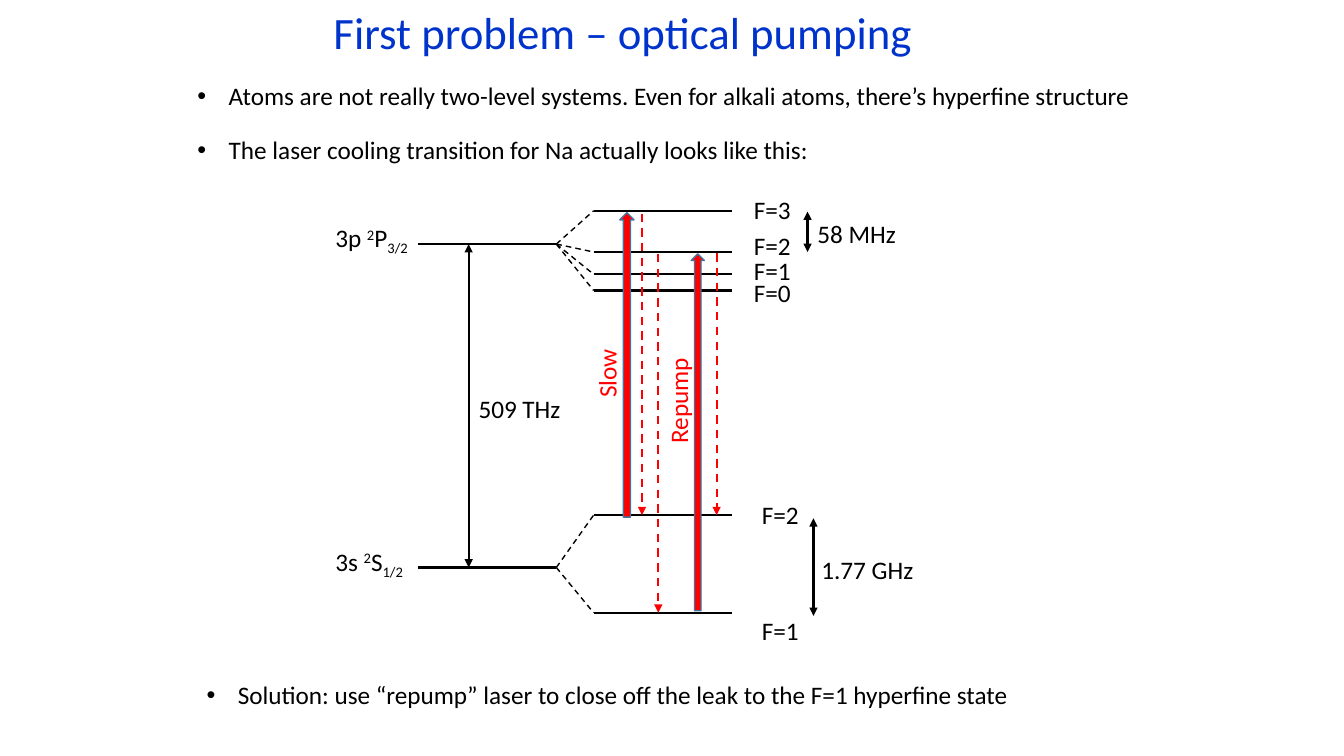
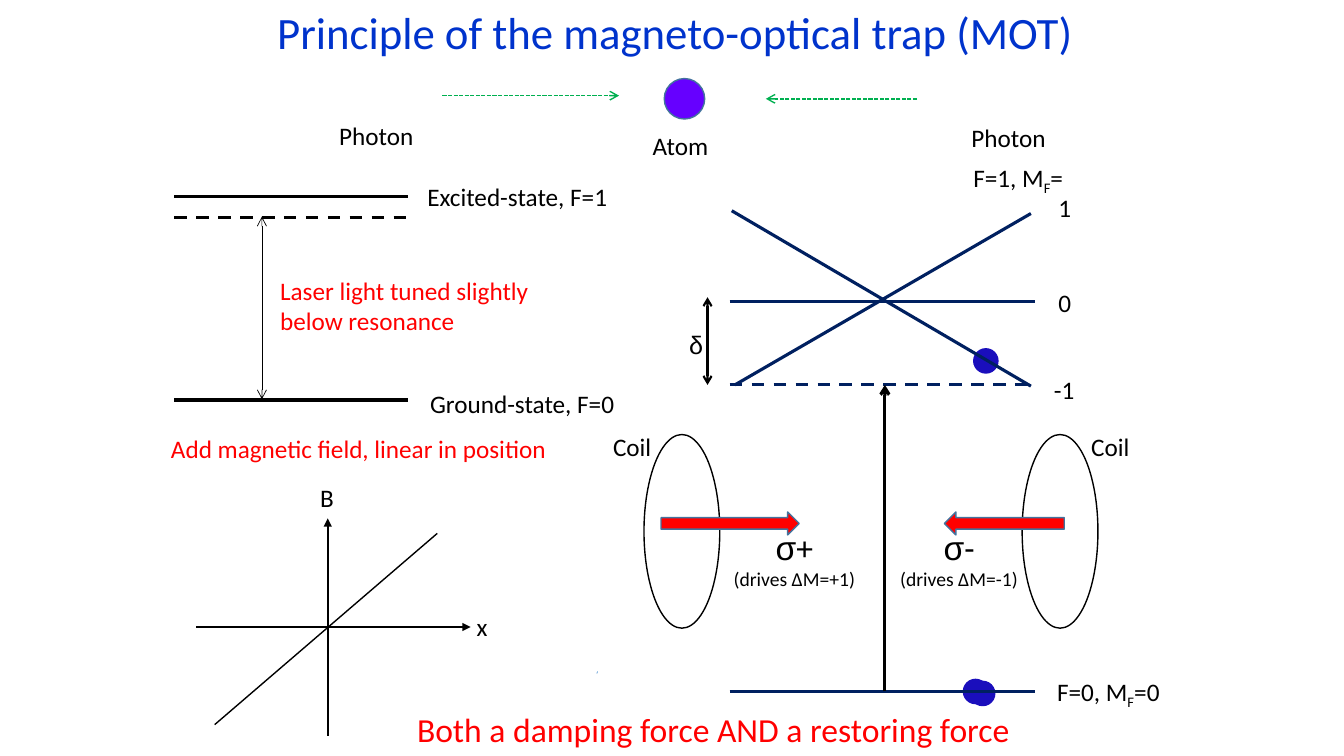
from dataclasses import dataclass
from lxml.etree import SubElement
from pptx import Presentation
from pptx.dml.color import RGBColor
from pptx.enum.dml import MSO_LINE
from pptx.enum.shapes import MSO_CONNECTOR, MSO_SHAPE
from pptx.enum.text import MSO_ANCHOR, MSO_AUTO_SIZE, PP_ALIGN
from pptx.oxml.ns import qn
from pptx.slide import Slide
from pptx.util import Cm, Pt

COLORS = {
    "title": "0033CC",
    "text": "000000",
    "accent": "FF0000",
    "outline": "43739E",
    "zeeman": "002060",
    "trapped": "1A0EBC",
    "atom": "6600FF",
    "photon": "00B050",
    "tick": "5B9BD5",
}
FONT = "Calibri"
SUPER, SUB = 30000, -25000
LINE_HEIGHT = 1.02


def color(name):
    return RGBColor.from_string(COLORS[name])


def set_font(font, size, name="text", family=FONT):
    font.size, font.name = Pt(size), family
    font.color.rgb = color(name)


def add_spans(para, spans):
    """Add plain strings, or (text, baseline) pairs, to a paragraph."""
    for item in spans:
        text, baseline = (item, 0) if isinstance(item, str) else item
        span = para.add_run()
        span.text = text
        if baseline:
            span.font._element.set("baseline", str(baseline))


@dataclass
class Region:
    """Part of a page; all lengths are in cm from its top left corner."""
    page: Slide
    left: float
    top: float

    def place(self, x, y):
        return Cm(self.left + x), Cm(self.top + y)

    def line(self, start, end, name="text", width=1.5, dash=None, head=None, tail=None):
        connector = self.page.shapes.add_connector(
            MSO_CONNECTOR.STRAIGHT, *self.place(*start), *self.place(*end))
        connector.line.color.rgb = color(name)
        connector.line.width = Pt(width)
        if dash:
            connector.line.dash_style = dash
        outline = connector.line._get_or_add_ln()
        for tag, kind in (("a:headEnd", head), ("a:tailEnd", tail)):
            if kind:
                SubElement(outline, qn(tag)).set("type", kind)
        SubElement(connector._element.spPr, qn("a:effectLst"))

    def shape(self, kind, x, y, width, height, fill=None, outline="outline"):
        shape = self.page.shapes.add_shape(kind, *self.place(x, y), Cm(width), Cm(height))
        shape.shadow.inherit = False
        if fill:
            shape.fill.solid()
            shape.fill.fore_color.rgb = color(fill)
        else:
            shape.fill.background()
        shape.line.color.rgb = color(outline)
        shape.line.width = Pt(1)

    def text_box(self, x, y, width, height=LINE_HEIGHT):
        box = self.page.shapes.add_textbox(*self.place(x, y), Cm(width), Cm(height))
        box.text_frame.word_wrap = True
        return box

    def label(self, x, y, *spans, width=5.5, name="text", size=18, family=FONT):
        box = self.text_box(x, y, width)
        para = box.text_frame.paragraphs[0]
        add_spans(para, spans)
        set_font(para.font, size, name, family)
        return box


def fit_placeholder(box, left, top, width, height):
    box.left, box.top, box.width, box.height = map(Cm, (left, top, width, height))
    frame = box.text_frame
    frame.auto_size = MSO_AUTO_SIZE.NONE
    frame.vertical_anchor = MSO_ANCHOR.TOP
    return frame


def add_title(page, text, left):
    frame = fit_placeholder(page.shapes.title, left, 0, 22, 1.63)
    para = frame.paragraphs[0]
    para.text = text
    para.alignment = PP_ALIGN.LEFT
    set_font(para.font, 32, "title")


def fill_bullets(box, lines, left, top, height):
    frame = fit_placeholder(box, left, top, 25, height)
    for index, text in enumerate(lines):
        para = frame.add_paragraph() if index else frame.paragraphs[0]
        para.text = text
        para.space_before, para.space_after = Pt(0), Pt(17)
        set_font(para.font, 18)
        indent = Cm(0.79)
        properties = para._p.get_or_add_pPr()
        properties.set("marL", str(indent))
        properties.set("indent", str(-indent))


def draw_hyperfine_levels(page, left, top):
    region = Region(page, left, top)
    coarse_left, coarse_right, fine_left, fine_right = 2.34, 5.82, 6.76, 10.24
    excited, ground = 1.45, 9.6
    upper, lower = (0.61, 1.65, 2.21, 2.62), (8.28, 10.74)

    for term, shell, subscript, level, split in (
            ("3p ", "P", "3/2", excited, upper), ("3s ", "S", "1/2", ground, lower)):
        region.line((coarse_left, level), (coarse_right, level))
        region.label(0, level - 0.67, term, ("2", SUPER), shell, (subscript, SUB), width=2.6)
        for fine in split:
            region.line((fine_left, fine), (fine_right, fine))
            region.line((coarse_right, level), (fine_left, fine), width=1, dash=MSO_LINE.DASH)

    for x, y, text in ((10.55, 0.08, "F=3"), (10.55, 0.99, "F=2"), (10.55, 1.62, "F=1"),
                       (10.55, 2.16, "F=0"), (10.75, 7.77, "F=2"), (10.75, 10.67, "F=1")):
        region.label(x, y, text, width=2.1)

    for x, start, end, text, text_x, text_y in (
            (3.61, excited, ground, "509 THz", 3.61, 5.08),
            (12.3, 8.36, 10.82, "1.77 GHz", 12.25, 9.14),
            (12.15, 0.63, 1.65, "58 MHz", 12.15, 0.68)):
        region.line((x, start), (x, end), head="triangle", tail="triangle")
        region.label(text_x, text_y, text, width=3.1)

    for x, start, width, height, text, text_x, text_y, text_width in (
            (7.42, 0.66, 0.36, 7.67, "Slow", 5.92, 3.89, 2.34),
            (9.22, 1.7, 0.33, 8.99, "Repump", 7.52, 4.85, 2.74)):
        region.shape(MSO_SHAPE.UP_ARROW, x, start, width, height, "accent")
        region.label(text_x, text_y, text, width=text_width, name="accent").rotation = 270

    for x, start, end in ((7.98, 0.68, lower[0]), (8.39, 1.7, lower[1]), (9.86, 1.68, lower[0])):
        region.line((x, start), (x, end), "accent", dash=MSO_LINE.DASH, tail="triangle")


def draw_atom_and_photons(page, left, top):
    region = Region(page, left, top)
    for start, end, y in ((2.85, 7.3, 0.43), (14.81, 11, 0.51)):
        region.line((start, y), (end, y), "photon", 1, MSO_LINE.SQUARE_DOT, tail="arrow")
    region.shape(MSO_SHAPE.OVAL, 8.44, 0, 1.02, 1.02, "atom")
    for x, y, text in ((0, 0.92, "Photon"), (7.9, 1.17, "Atom"), (15.93, 0.99, "Photon")):
        region.label(x, y, text, width=2.8)


def draw_detuned_laser(page, left, top):
    region = Region(page, left, top)
    for y, dash in ((0.55, None), (1.09, MSO_LINE.DASH), (5.68, None)):
        region.line((0, y), (5.89, y), width=2.25, dash=dash)
    region.line((2.21, 5.66), (2.21, 1.06), width=0.5, head="arrow", tail="arrow")
    region.label(6.13, 0.04, "Excited-state, F=1")
    region.label(6.2, 5.25, "Ground-state, F=0")
    region.label(2.42, 2.41, "Laser light tuned slightly below resonance",
                 width=7.09, name="accent")


def draw_field_plot(page, left, top):
    region = Region(page, left, top)
    region.label(0, 0, "Add magnetic field, linear in position", width=11, name="accent")
    region.line((4.2, 7.74), (4.2, 2.26), tail="triangle")
    region.line((0.89, 5), (7.8, 5), tail="triangle")
    region.line((1.35, 7.46), (6.96, 2.64), width=1)
    region.label(3.76, 1.24, "B", width=1.2)
    region.label(7.7, 4.47, "x", width=1.2)


def draw_zeeman_levels(page, left, top):
    region = Region(page, left, top)
    for x, y in ((7.18, 13.16), (7.44, 4.83), (7.36, 13.21)):
        region.shape(MSO_SHAPE.OVAL, x, y, 0.61, 0.61, "trapped", "trapped")

    ground, middle, laser = 13.46, 3.63, 5.74
    for start, end, dash in (
            ((1.29, ground), (8.99, ground), None),
            ((1.29, middle), (8.99, middle), None),
            ((1.34, 1.35), (8.88, 5.77), None),
            ((1.42, laser), (8.88, 1.42), None),
            ((1.29, laser), (8.99, laser), MSO_LINE.DASH)):
        region.line(start, end, "zeeman", 2.25, dash)
    region.line((5.2, ground), (5.2, laser), width=2.25, tail="arrow")
    region.line((0.73, 3.53), (0.73, laser), head="arrow", tail="arrow")

    region.label(0.02, 4.22, "δ", width=1.2, family="Arial")
    for x, y, text in ((9.32, 0.76, "1"), (9.32, 3.15, "0"), (9.21, 5.34, "-1")):
        region.label(x, y, text, width=1.5)
    for x, y, state, value in ((7.18, 0, "F=1, M", "="), (9.29, 12.96, "F=0, M", "=0")):
        region.label(x, y, state, ("F", SUB), value, width=4)


def draw_coils_and_beams(page, left, top):
    region = Region(page, left, top)
    for coil_x, text_x in ((1.03, 0), (10.56, 12.05)):
        region.shape(MSO_SHAPE.OVAL, coil_x, 0.2, 1.91, 4.88, outline="text")
        region.label(text_x, 0, "Coil", width=1.8)
    for kind, x, width, sign, rule, center in (
            (MSO_SHAPE.RIGHT_ARROW, 1.46, 3.48, "+", "(drives ΔM=+1)", 4.82),
            (MSO_SHAPE.LEFT_ARROW, 8.6, 3.02, "-", "(drives ΔM=-1)", 8.97)):
        region.shape(kind, x, 2.15, width, 0.58, "accent")
        frame = region.text_box(center - 2.1, 2.4, 4.2, 1.88).text_frame
        polarization, drive = frame.paragraphs[0], frame.add_paragraph()
        add_spans(polarization, ("σ", sign))
        add_spans(drive, (rule,))
        for para, size in ((polarization, 24), (drive, 14)):
            para.alignment = PP_ALIGN.CENTER
            set_font(para.font, size)
        polarization.runs[0].font.name = "Arial"


def build_pumping_page(deck):
    page = deck.slides.add_slide(deck.slide_layouts.get_by_name("Two Content"))
    add_title(page, "First problem – optical pumping", 8.15)
    problem, solution = list(page.placeholders)[1:]
    fill_bullets(problem, (
        "Atoms are not really two-level systems. Even for alkali atoms, "
        "there’s hyperfine structure",
        "The laser cooling transition for Na actually looks like this:"), 4.72, 1.9, 2.4)
    fill_bullets(solution, (
        "Solution: use “repump” laser to close off the leak to the F=1 hyperfine state",),
        4.95, 17, LINE_HEIGHT)
    draw_hyperfine_levels(page, 8.2, 4.7)


def build_trap_page(deck):
    page = deck.slides.add_slide(deck.slide_layouts.get_by_name("Title Only"))
    add_title(page, "Principle of the magneto-optical trap (MOT)", 6.73)
    draw_atom_and_photons(page, 8.3, 1.98)
    draw_detuned_laser(page, 4.39, 4.4)
    draw_field_plot(page, 4.06, 10.8)
    draw_coils_and_beams(page, 15.2, 10.75)
    draw_zeeman_levels(page, 17.1, 3.96)
    whole = Region(page, 0, 0)
    whole.line((15.06, 16.92), (15.04, 16.97), "tick", 0.5)
    whole.label(10.26, 17.75, "Both a damping force AND a restoring force",
                width=17, name="accent", size=24)


def main():
    deck = Presentation()
    deck.slide_width, deck.slide_height = Cm(33.87), Cm(19.05)
    build_pumping_page(deck)
    build_trap_page(deck)
    deck.save("out.pptx")


if __name__ == "__main__":
    main()
